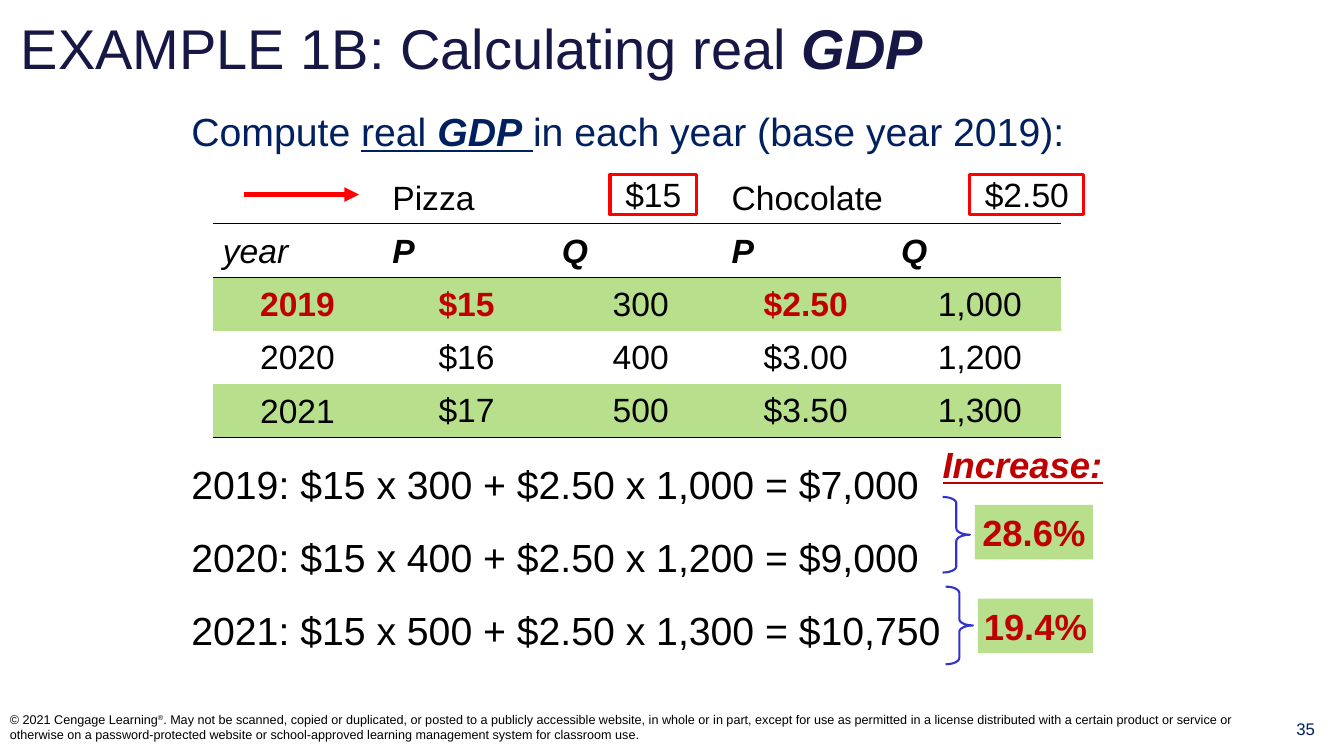
import pptx
import pptx.dml.color
import pptx.enum.shapes
import pptx.enum.text
import pptx.oxml
import pptx.oxml.ns
import pptx.util

Inches = pptx.util.Inches
Points = pptx.util.Pt
Align = pptx.enum.text.PP_ALIGN
Anchor = pptx.enum.text.MSO_ANCHOR
Shape = pptx.enum.shapes.MSO_SHAPE

BLACK, NAVY, TITLE_NAVY = "000000", "002060", "171745"
CRIMSON, RED, GREEN, BLUE = "C00000", "FF0000", "B8E08C", "3333CC"
NO_TABLE_STYLE = "{2D5ABB26-0587-4C30-8999-92F81FD0307C}"
DRAWING = pptx.oxml.ns.nsdecls("a")


def color(value):
    return pptx.dml.color.RGBColor.from_string(value)


def set_values(target, values):
    for name, value in values.items():
        setattr(target, name, value)


class SlideBuilder:
    font_name = "Arial"

    def __init__(self, deck):
        self.page = deck.slides.add_slide(deck.slide_layouts[6])

    def fill_text(self, frame, paras, size, ink, para_format=None, gap=0, **font):
        """Each para is a string or a list of (text, font values) spans."""
        for index, spans in enumerate(paras):
            para = frame.add_paragraph() if index else frame.paragraphs[0]
            set_values(para, para_format or {})
            if index and gap:
                para.space_before = Points(gap)
            for text, changes in [(spans, {})] if isinstance(spans, str) else spans:
                span = para.add_run()
                span.text = text
                span.font.color.rgb = color(ink)
                changes = dict(changes)
                baseline = changes.pop("baseline", None)
                set_values(span.font, {"name": self.font_name, "size": Points(size),
                                       **font, **changes})
                if baseline:
                    span.font._element.set("baseline", str(baseline))

    def text(self, at, paras, size, ink, wrap=True, anchor=Anchor.TOP, **style):
        box = self.page.shapes.add_textbox(*map(Inches, at))
        set_values(box.text_frame, {"word_wrap": wrap, "vertical_anchor": anchor})
        self.fill_text(box.text_frame, paras, size, ink, **style)

    def shape(self, kind, at, fill=None, line=None, width=1.5):
        shape = self.page.shapes.add_shape(kind, *map(Inches, at))
        shape.shadow.inherit = False
        if fill:
            shape.fill.solid()
            shape.fill.fore_color.rgb = color(fill)
        else:
            shape.fill.background()
        if line:
            shape.line.color.rgb = color(line)
            shape.line.width = Points(width)
        else:
            shape.line.fill.background()
        return shape

    def label(self, at, text, size, ink, fill=None, line=None, width=1.5, **font):
        shape = self.shape(Shape.RECTANGLE, at, fill, line, width)
        inset = Inches(0.05)
        set_values(shape.text_frame, {
            "word_wrap": False, "vertical_anchor": Anchor.MIDDLE,
            "margin_left": inset, "margin_right": inset,
            "margin_top": inset, "margin_bottom": inset})
        self.fill_text(shape.text_frame, [text], size, ink,
                       {"alignment": Align.CENTER}, **font)

    def brace(self, at):
        shape = self.shape(Shape.RIGHT_BRACE, at, line=BLUE)
        shape.adjustments[0] = 0.23
        shape.adjustments[1] = 0.5

    def arrow(self, start, end, ink, width):
        line = self.page.shapes.add_connector(
            pptx.enum.shapes.MSO_CONNECTOR.STRAIGHT, *map(Inches, start + end))
        line.line.color.rgb = color(ink)
        line.line.width = Points(width)
        line.line._get_or_add_ln().append(
            pptx.oxml.parse_xml(f'<a:tailEnd {DRAWING} type="triangle"/>'))
        line._element.spPr.append(pptx.oxml.parse_xml(f"<a:effectLst {DRAWING}/>"))

    def table(self, at, rows, row_heights):
        frame = self.page.shapes.add_table(len(rows), len(rows[0]), *map(Inches, at))
        table = frame.table
        set_values(table, {"first_row": False, "horz_banding": False})
        table._tbl.tblPr.find(pptx.oxml.ns.qn("a:tableStyleId")).text = NO_TABLE_STYLE
        for row, height in zip(table.rows, row_heights):
            row.height = Inches(height)
        return table

    def bottom_border(self, cell):
        cell._tc.get_or_add_tcPr().insert(0, pptx.oxml.parse_xml(
            f'<a:lnB {DRAWING} w="12700"><a:solidFill><a:srgbClr val="{BLACK}"/>'
            "</a:solidFill></a:lnB>"))


def price_table(slide):
    rows = [["", "Pizza", "", "Chocolate", ""],
            ["year", "P", "Q", "P", "Q"],
            ["2019", "$15", "300", "$2.50", "1,000"],
            ["2020", "$16", "400", "$3.00", "1,200"],
            ["2021", "$17", "500", "$3.50", "1,300"]]
    table = slide.table((2.11, 1.7, 8.41, 2.64), rows, [0.5] + [0.53] * 4)
    for column in (1, 3):
        table.cell(0, column).merge(table.cell(0, column + 1))
    for row, values in enumerate(rows):
        for column, value in enumerate(values):
            cell = table.cell(row, column)
            cell.vertical_anchor = Anchor.MIDDLE
            data = row >= 2
            base_value = row == 2 and column in (0, 1, 3)
            if data and column:
                # Prices sit slightly left of centre
                set_values(cell, {"margin_left": Inches(0.09),
                                  "margin_right": Inches(0.1 if column % 2 else 0.01),
                                  "margin_top": Inches(0.01), "margin_bottom": 0})
            if value:
                para_format = {"alignment": Align.CENTER if data else Align.LEFT}
                if not data or column == 0:
                    para_format["line_spacing"] = 1.05
                slide.fill_text(cell.text_frame, [value], 24,
                                CRIMSON if base_value else BLACK,
                                para_format, italic=row == 1,
                                bold=base_value or (row == 1 and column > 0))
            if row in (2, 4):
                cell.fill.solid()
                cell.fill.fore_color.rgb = color(GREEN)
            else:
                cell.fill.background()
            if row in (0, 1, 4):
                slide.bottom_border(cell)


def main():
    deck = pptx.Presentation()
    set_values(deck, {"slide_width": Inches(13.33), "slide_height": Inches(7.5)})
    slide = SlideBuilder(deck)
    strong = {"bold": True, "italic": True}

    # Title and footer
    slide.text((0.11, 0.11, 13, 0.72),
               [[("EXAMPLE 1B: Calculating real ", {}), ("GDP", strong)]],
               40, TITLE_NAVY, wrap=False, anchor=Anchor.MIDDLE)
    slide.text((12.57, 7.08, 0.76, 0.41), ["35"], 12, NAVY,
               para_format={"alignment": Align.CENTER})
    slide.text((0, 6.92, 12.78, 0.58), [[
        ("© 2021 Cengage Learning", {}), ("®", {"baseline": 30000}),
        (". May not be scanned, copied or duplicated, or posted to a publicly accessible "
         "website, in whole or in part, except for use as permitted in a license distributed "
         "with a certain product or service or otherwise on a password-protected website or "
         "school-approved learning management system for classroom use.", {})]],
        9, BLACK, anchor=Anchor.MIDDLE)

    # Question and worked answers
    slide.text((1.8, 1.02, 9.32, 0.55), [[
        ("Compute ", {}), ("real ", {"underline": True}),
        ("GDP", {"underline": True, **strong}), (" ", {"underline": True}),
        ("in each year (base year 2019):", {})]], 28, NAVY)
    slide.text((1.8, 4.52, 9.32, 2.1),
               ["2019: $15 x 300 + $2.50 x 1,000 = $7,000",
                "2020: $15 x 400 + $2.50 x 1,200 = $9,000",
                "2021: $15 x 500 + $2.50 x 1,300 = $10,750"], 28, BLACK, gap=18.5)

    price_table(slide)

    # Yearly increases
    slide.text((9.25, 4.34, 2, 0.53), ["Increase:"], 26, CRIMSON, underline=True, **strong)
    for text, label_at, brace_at in [
            ("28.6%", (9.67, 5.01, 1.17, 0.54), (9.35, 4.93, 0.27, 0.75)),
            ("19.4%", (9.7, 5.94, 1.14, 0.54), (9.38, 5.82, 0.27, 0.77))]:
        slide.label(label_at, text, 26, CRIMSON, fill=GREEN, bold=True)
        slide.brace(brace_at)

    # Base-year prices
    for text, left, width in [("$15", 6.05, 0.86), ("$2.50", 9.62, 1.13)]:
        slide.label((left, 1.73, width, 0.4), text, 24, BLACK, line=RED, width=2.25)
    slide.arrow((2.42, 1.93), (3.56, 1.93), RED, 3.5)

    deck.save("out.pptx")


if __name__ == "__main__":
    main()
